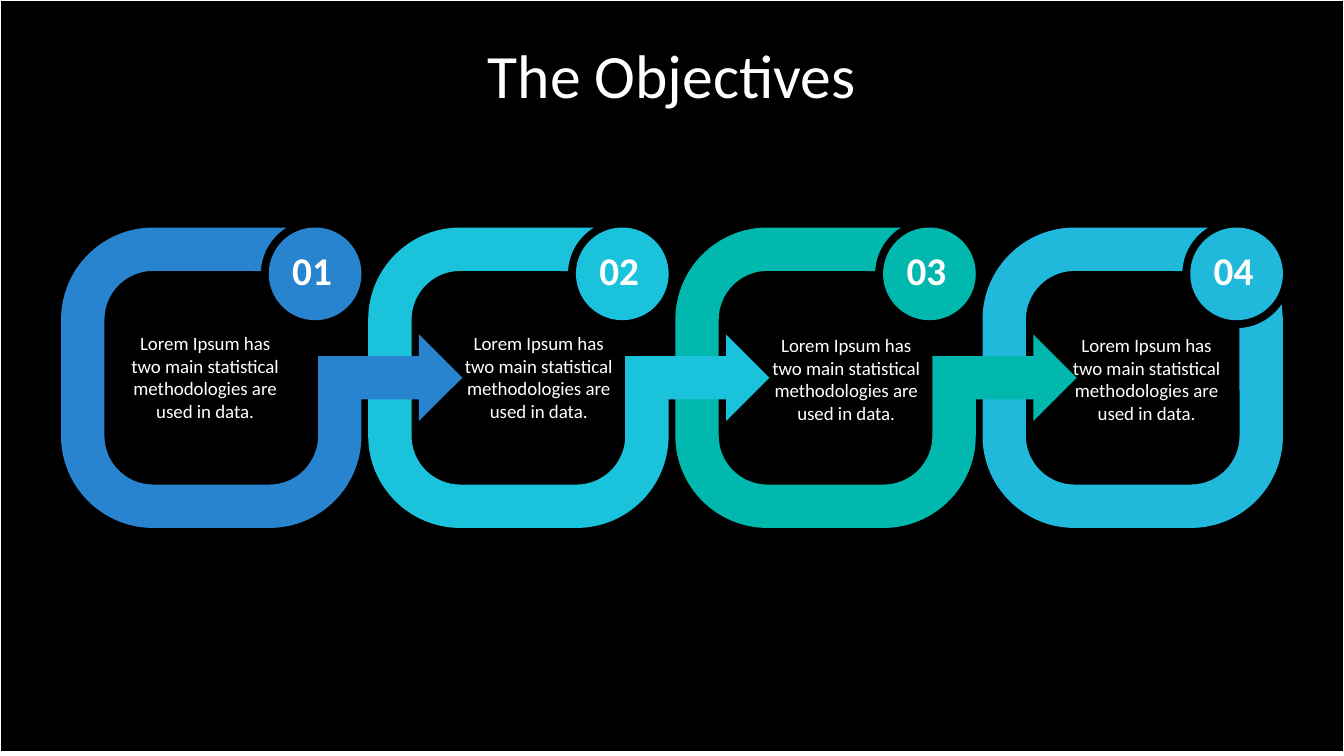
from math import cos, radians, sin, tan

from pptx import Presentation
from pptx.dml.color import RGBColor
from pptx.enum.shapes import MSO_SHAPE
from pptx.enum.text import MSO_ANCHOR, PP_ALIGN
from pptx.oxml.ns import qn
from pptx.util import Pt

RECTANGLE, OVAL = MSO_SHAPE.RECTANGLE, MSO_SHAPE.OVAL
TOP, MIDDLE = MSO_ANCHOR.TOP, MSO_ANCHOR.MIDDLE
CENTER = PP_ALIGN.CENTER

COLORS = {
    "black": "000000",
    "white": "FFFFFF",
    "blue": "2884CE",
    "cyan": "1AC2DC",
    "teal": "00B8AD",
    "sky": "20B9DC",
}
FONT = "Calibri"
TITLE = "The Objectives"
LOREM = "Lorem Ipsum has two main statistical methodologies are used in data."
# number, colour, text, left and top of the text box
OBJECTIVES = [
    ("01", "blue", LOREM, 84.24, 232.56),
    ("02", "cyan", LOREM, 322.56, 232.56),
    ("03", "teal", LOREM, 542.16, 234),
    ("04", "sky", LOREM, 756.72, 234),
]

# Link geometry, in points
LINK_LEFT, LINK_TOP, LINK_PITCH = 43.6, 162.5, 219.4
LINK_SIZE, BAND, OUTER_RADIUS = 214.6, 31, 65.8
INNER_RADIUS = OUTER_RADIUS - BAND
NEAR, FAR = OUTER_RADIUS, LINK_SIZE - OUTER_RADIUS
BADGE_SIZE, NOTCH_RADIUS = 66.2, 38.8
BADGE_CENTER = (LINK_SIZE - BADGE_SIZE / 2, BADGE_SIZE / 2)
ARROW_TIP, ARROW_NECK, ARROW_HALF = 286.6, 255.7, 30.9
CORNERS = [((FAR, FAR), 0), ((NEAR, FAR), 90), ((NEAR, NEAR), 180)]


def corner(x, y):
    """An outline node reached by a straight line: its point, no controls."""
    return (x, y), ()


def arc(center, radius, start, end):
    """Nodes of an arc as one cubic curve; degrees run clockwise from the right."""
    first, final = radians(start), radians(end)
    reach = 4 / 3 * tan((final - first) / 4)

    def point(angle, along):
        return (
            center[0] + radius * (cos(angle) - along * sin(angle)),
            center[1] + radius * (sin(angle) + along * cos(angle)),
        )

    controls = (point(first, reach), point(final, -reach))
    return [corner(*point(first, 0)), (point(final, 0), controls)]


def link_outline(has_arrow):
    """Outline of one link, relative to its top left corner."""
    # Neighbouring corners on the same side of the band join by straight lines
    band = []
    for center, start in CORNERS:
        band += arc(center, INNER_RADIUS, start, start + 90)
    band += arc(BADGE_CENTER, NOTCH_RADIUS, 183, 238.5)
    for center, start in reversed(CORNERS):
        band += arc(center, OUTER_RADIUS, start + 90, start)
    if not has_arrow:
        return arc(BADGE_CENTER, NOTCH_RADIUS, 34, 87) + band + [corner(LINK_SIZE, NEAR)]
    middle = LINK_SIZE / 2
    upper, lower = middle - BAND / 2, middle + BAND / 2
    head = [
        corner(ARROW_TIP, middle),
        corner(ARROW_NECK, middle - ARROW_HALF),
        corner(ARROW_NECK, upper),
        corner(LINK_SIZE - BAND, upper),
    ]
    tail = [
        corner(LINK_SIZE, lower),
        corner(ARROW_NECK, lower),
        corner(ARROW_NECK, middle + ARROW_HALF),
    ]
    return head + band + tail


def rgb(name):
    return RGBColor.from_string(COLORS[name])


def paint(shape, color):
    shape.shadow.inherit = False
    shape.fill.solid()
    shape.fill.fore_color.rgb = rgb(color)
    shape.line.fill.background()


def write(shape, text, size, bold=False, anchor=TOP, insets=(7.2, 3.6, 7.2, 3.6), spacing=None):
    """Insets run left, top, right, bottom."""
    frame = shape.text_frame
    frame.word_wrap = True
    frame.vertical_anchor = anchor
    frame.margin_left, frame.margin_top, frame.margin_right, frame.margin_bottom = map(Pt, insets)
    paragraph = frame.paragraphs[0]
    paragraph.alignment = CENTER
    paragraph.line_spacing = spacing
    run = paragraph.add_run()
    run.text = text
    run.font.name, run.font.size, run.font.bold = FONT, Pt(size), bold
    run.font.color.rgb = rgb("white")


def bend(link, outline, left):
    """Turn the straight segments that have control points into curves."""
    contour = next(link.element.iter(qn("a:path")))
    for segment, (_, controls) in zip(list(contour), outline):
        if not controls:
            continue
        curve = contour.makeelement(qn("a:cubicBezTo"))
        for x, y in controls:
            control = curve.makeelement(qn("a:pt"))
            control.set("x", str(Pt(left + x) - link.left))
            control.set("y", str(Pt(LINK_TOP + y) - link.top))
            curve.append(control)
        curve.append(segment[0])
        contour.replace(segment, curve)


def add_link(shapes, left, color, has_arrow):
    outline = link_outline(has_arrow)
    points = [(Pt(left + x), Pt(LINK_TOP + y)) for (x, y), _ in outline]
    builder = shapes.build_freeform(*points[0])
    builder.add_line_segments(points[1:])
    link = builder.convert_to_shape()
    bend(link, outline, left)
    paint(link, color)


def add_badge(shapes, left, color, number):
    badge = shapes.add_shape(
        OVAL, Pt(left + LINK_SIZE - BADGE_SIZE), Pt(LINK_TOP), Pt(BADGE_SIZE), Pt(BADGE_SIZE)
    )
    paint(badge, color)
    write(badge, number, 28, bold=True, anchor=MIDDLE, insets=(0, 0, 4.3, 5.4))


def main():
    deck = Presentation()
    deck.slide_width, deck.slide_height = Pt(960), Pt(540)
    shapes = deck.slides.add_slide(deck.slide_layouts[6]).shapes

    backdrop = shapes.add_shape(RECTANGLE, 0, 0, Pt(960), Pt(537))
    paint(backdrop, "black")
    backdrop.line.color.rgb = rgb("white")
    backdrop.line.width = Pt(1)

    # Later links lie behind, so that each arrow overlaps the next link
    last = len(OBJECTIVES) - 1
    for index in range(last, -1, -1):
        number, color = OBJECTIVES[index][:2]
        left = LINK_LEFT + index * LINK_PITCH
        add_link(shapes, left, color, has_arrow=index < last)
        add_badge(shapes, left, color, number)

    title = shapes.add_textbox(Pt(66), Pt(28.8), Pt(828), Pt(104.4))
    write(title, TITLE, 44, spacing=0.9)
    for _, _, text, left, top in OBJECTIVES:
        box = shapes.add_textbox(Pt(left), Pt(top), Pt(124.56), Pt(74.16))
        write(box, text, 13.5, insets=(8.64, 4.32, 8.64, 4.32))

    deck.save("out.pptx")


if __name__ == "__main__":
    main()
